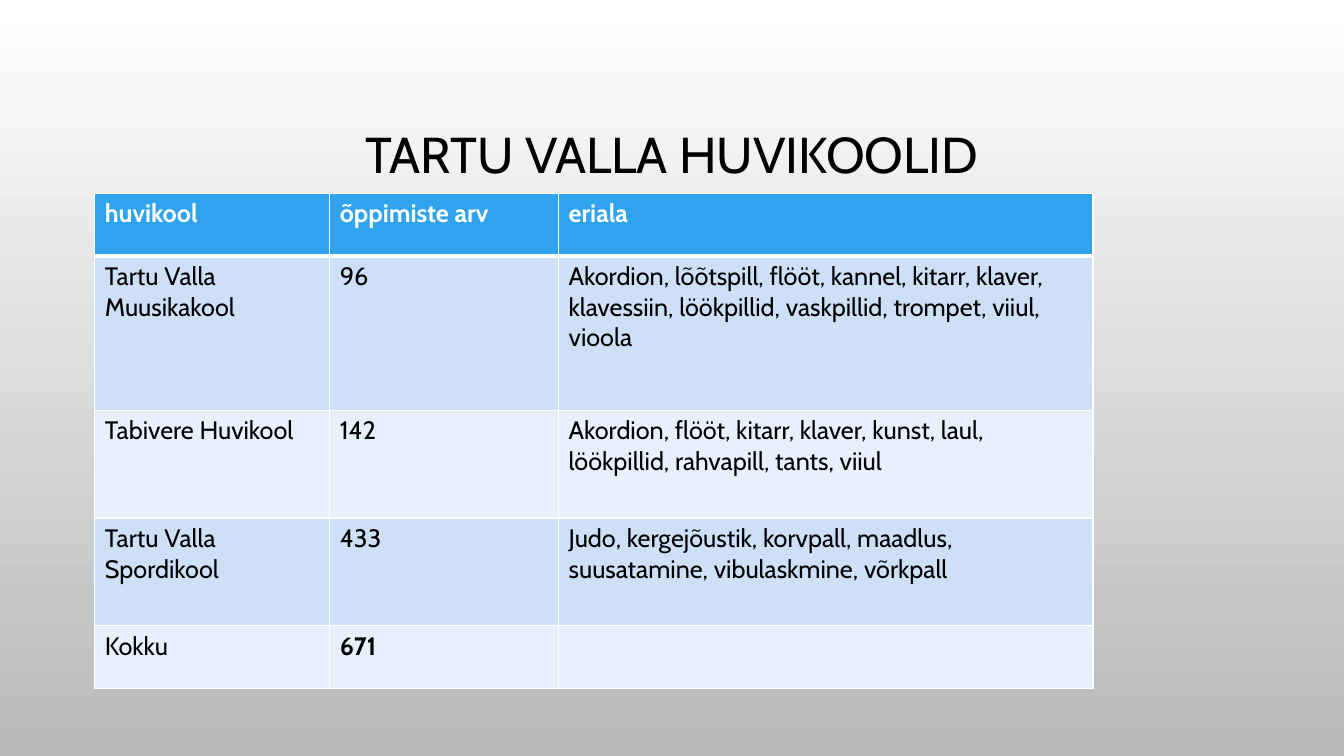
from dataclasses import dataclass

from lxml.etree import SubElement
from pptx import Presentation
from pptx.dml.color import RGBColor
from pptx.enum.text import MSO_ANCHOR, PP_ALIGN
from pptx.oxml.ns import qn
from pptx.util import Emu, Pt

PX = 9144  # EMU in one px, 100 px to the inch
FONT = "Cabin"
COLORS = {
    "white": "FFFFFF",
    "black": "000000",
    "bottom": "B9B9B9",
    "header": "2FA3EE",
    "odd": "CDE0F8",
    "even": "E8F0FC",
}
COLUMN_WIDTHS = (233, 227, 530)


@dataclass
class SchoolRow:
    height: int
    texts: tuple[str, str, str]
    fill: str
    color: str = "black"
    bold: tuple[bool, bool, bool] = (False, False, False)
    top: int = 1
    bottom: int = 1


ROWS = (
    SchoolRow(62, ("huvikool", "õppimiste arv", "eriala"), "header", "white",
              (True, True, True), bottom=3),
    SchoolRow(153, ("Tartu Valla Muusikakool", "96",
                    "Akordion, lõõtspill, flööt, kannel, kitarr, klaver, klavessiin, "
                    "löökpillid, vaskpillid, trompet, viiul, vioola"), "odd", top=3),
    SchoolRow(107, ("Tabivere Huvikool", "142",
                    "Akordion, flööt, kitarr, klaver, kunst, laul, löökpillid, "
                    "rahvapill, tants, viiul"), "even"),
    SchoolRow(107, ("Tartu Valla Spordikool", "433",
                    "Judo, kergejõustik, korvpall, maadlus, suusatamine, "
                    "vibulaskmine, võrkpall"), "odd"),
    SchoolRow(62, ("Kokku", "671", ""), "even", bold=(False, True, False)),
)


def px(*lengths: int) -> list[Emu]:
    return [Emu(length * PX) for length in lengths]


def rgb(name: str) -> RGBColor:
    return RGBColor.from_string(COLORS[name])


def style_font(font, size: int, color: str, bold: bool = False) -> None:
    for attribute, value in {"name": FONT, "size": Pt(size), "bold": bold}.items():
        setattr(font, attribute, value)
    font.color.rgb = rgb(color)


def draw_borders(cell, top: int, bottom: int) -> None:
    properties = cell._tc.get_or_add_tcPr()
    for side, width in {"lnL": 1, "lnR": 1, "lnT": top, "lnB": bottom}.items():
        border = SubElement(properties, qn(f"a:{side}"), w=str(Pt(width)))
        solid = SubElement(border, qn("a:solidFill"))
        SubElement(solid, qn("a:srgbClr"), val=COLORS["white"])


def draw_background(slide) -> None:
    fill = slide.background.fill
    fill.gradient()
    fill.gradient_angle = 270
    for stop, color, position in zip(fill.gradient_stops, ("white", "bottom"), (0, 1)):
        stop.color.rgb = rgb(color)
        stop.position = position


def draw_title(slide, text: str) -> None:
    frame = slide.shapes.add_textbox(*px(100, 68, 1133, 175)).text_frame
    frame.word_wrap = True
    frame.vertical_anchor = MSO_ANCHOR.MIDDLE
    heading = frame.paragraphs[0]
    heading.text = text
    heading.alignment = PP_ALIGN.CENTER
    heading.line_spacing = 0.9
    style_font(heading.font, 36, "black")


def draw_schools(slide) -> None:
    size = (sum(COLUMN_WIDTHS), sum(row.height for row in ROWS))
    schools = slide.shapes.add_table(
        len(ROWS), len(COLUMN_WIDTHS), *px(94, 192, *size)).table
    for column, width in zip(schools.columns, px(*COLUMN_WIDTHS)):
        column.width = width
    for line, row in zip(schools.rows, ROWS):
        line.height = Emu(row.height * PX)
        for cell, text, bold in zip(line.cells, row.texts, row.bold):
            draw_borders(cell, row.top, row.bottom)
            cell.fill.solid()
            cell.fill.fore_color.rgb = rgb(row.fill)
            cell.text = text
            style_font(cell.text_frame.paragraphs[0].font, 18, row.color, bold)


def main() -> None:
    deck = Presentation()
    deck.slide_width, deck.slide_height = px(1333, 750)
    slide = deck.slides.add_slide(deck.slide_layouts[6])
    draw_background(slide)
    draw_title(slide, "TARTU VALLA HUVIKOOLID")
    draw_schools(slide)
    deck.save("out.pptx")


if __name__ == "__main__":
    main()
